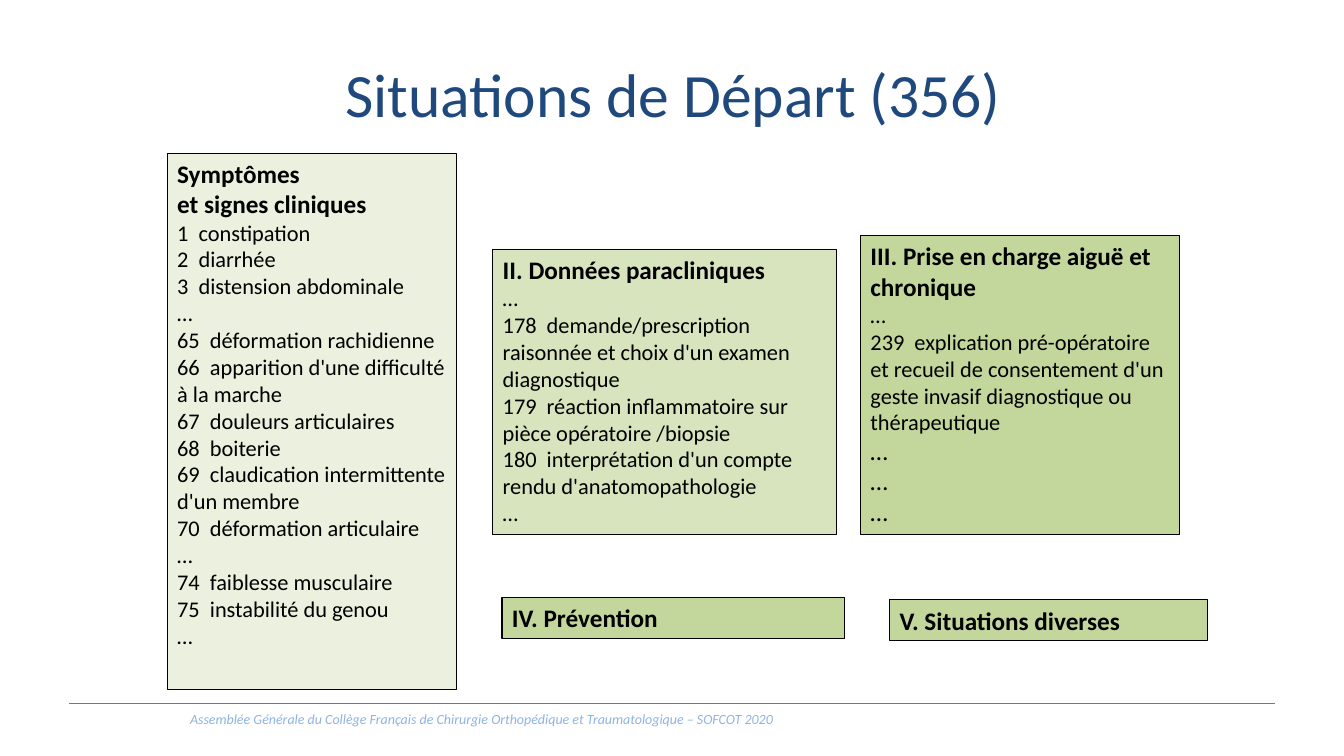
from lxml import etree
from pptx import Presentation
from pptx.dml.color import RGBColor
from pptx.enum.shapes import MSO_CONNECTOR, MSO_SHAPE
from pptx.enum.text import MSO_ANCHOR, MSO_AUTO_SIZE, PP_ALIGN
from pptx.oxml.ns import qn
from pptx.util import Pt

STRAIGHT = MSO_CONNECTOR.STRAIGHT
RECTANGLE = MSO_SHAPE.RECTANGLE
TOP, MIDDLE = MSO_ANCHOR.TOP, MSO_ANCHOR.MIDDLE
LEFT, CENTER = PP_ALIGN.LEFT, PP_ALIGN.CENTER
NO_FIT = MSO_AUTO_SIZE.NONE
TITLE_ONLY = 5

FONT = "Calibri"
BLACK, NAVY, SKY, RULE_BLUE = "000000", "1F497D", "8EB4E3", "4B7EBC"
PALE_GREEN, LIGHT_GREEN, GREEN = "EBF1DE", "D7E4BD", "C3D69B"
HEADING_SIZE, ITEM_SIZE = 18, 16

SYMPTOMS = [
    "1  constipation",
    "2  diarrhée",
    "3  distension abdominale",
    "…",
    "65  déformation rachidienne",
    "66  apparition d'une difficulté à la marche",
    "67  douleurs articulaires",
    "68  boiterie",
    "69  claudication intermittente d'un membre",
    "70  déformation articulaire",
    "…",
    "74  faiblesse musculaire",
    "75  instabilité du genou",
    "…",
]
PARACLINICAL = [
    "…",
    "178  demande/prescription raisonnée et choix d'un examen diagnostique",
    "179  réaction inflammatoire sur pièce opératoire /biopsie",
    "180  interprétation d'un compte rendu d'anatomopathologie",
    "…",
]
CARE = [
    "…",
    "239  explication pré-opératoire et recueil de consentement d'un geste "
    "invasif diagnostique ou thérapeutique",
]

# Box (left, top, width, height), fill, line width, headings, items, large items
CATEGORIES = [
    ((119.5, 109.5, 206.7, 383), PALE_GREEN, 1,
     ["Symptômes", "et signes cliniques"], SYMPTOMS, []),
    ((352, 178, 245.5, 203.7), LIGHT_GREEN, 0.75,
     ["II. Données paracliniques"], PARACLINICAL, []),
    ((614.7, 168.3, 228, 213.3), GREEN, 0.75,
     ["III. Prise en charge aiguë et chronique"], CARE, ["…"] * 3),
    ((358.6, 427, 244.8, 29), GREEN, 0.75, ["IV. Prévention"], [], []),
    ((635.5, 428.5, 227, 29), GREEN, 0.75, ["V. Situations diverses"], [], []),
]


def color(hex_code):
    return RGBColor.from_string(hex_code)


def points(box):
    return [Pt(length) for length in box]


def format_para(para, size, hex_code, align=LEFT, bold=False, italic=False):
    para.alignment = align
    for span in para.runs:
        font = span.font
        font.name, font.size = FONT, Pt(size)
        font.bold, font.italic = bold, italic
        font.color.rgb = color(hex_code)


def add_title(page, box):
    title = page.shapes.title
    title.left, title.top, title.width, title.height = points(box)
    frame = title.text_frame
    frame.text = "Situations de Départ (356)"
    frame.auto_size = NO_FIT
    frame.vertical_anchor = MIDDLE
    format_para(frame.paragraphs[0], 44, NAVY, CENTER)


def add_footer(page, box, rule_width):
    """Draw the rule along the top of the box and the event name below it."""
    left, top, width, height = box
    rule = page.shapes.add_connector(
        STRAIGHT, *points((left, top, left + rule_width, top)))
    rule.line.color.rgb = color(RULE_BLUE)
    rule.line.width = Pt(0.75)
    etree.SubElement(rule._element.spPr, qn("a:effectLst"))

    label = page.shapes.add_textbox(*points((left, top + 1.5, width, height)))
    frame = label.text_frame
    frame.word_wrap = True
    frame.text = ("Assemblée Générale du Collège Français de Chirurgie "
                  "Orthopédique et Traumatologique – SOFCOT 2020")
    format_para(frame.paragraphs[0], 10, SKY, CENTER, italic=True)


def add_category(page, box, fill, line_width, headings, items, large_items):
    panel = page.shapes.add_shape(RECTANGLE, *points(box))
    panel.shadow.inherit = False
    panel.fill.solid()
    panel.fill.fore_color.rgb = color(fill)
    panel.line.color.rgb = color(BLACK)
    panel.line.width = Pt(line_width)

    frame = panel.text_frame
    frame.word_wrap = True
    frame.vertical_anchor = TOP
    lines = ([(text, HEADING_SIZE, True) for text in headings]
             + [(text, ITEM_SIZE, False) for text in items]
             + [(text, HEADING_SIZE, False) for text in large_items])
    frame.text = "\n".join(text for text, _, _ in lines)
    for para, (_, size, bold) in zip(frame.paragraphs, lines):
        format_para(para, size, BLACK, bold=bold)


def main():
    deck = Presentation()
    deck.slide_width, deck.slide_height = Pt(960), Pt(540)
    page = deck.slides.add_slide(deck.slide_layouts[TITLE_ONLY])
    add_footer(page, (49, 502.5, 589.7, 19.4), 862)
    add_title(page, (49, 21, 864, 90))
    for category in CATEGORIES:
        add_category(page, *category)
    deck.save("out.pptx")


if __name__ == "__main__":
    main()
